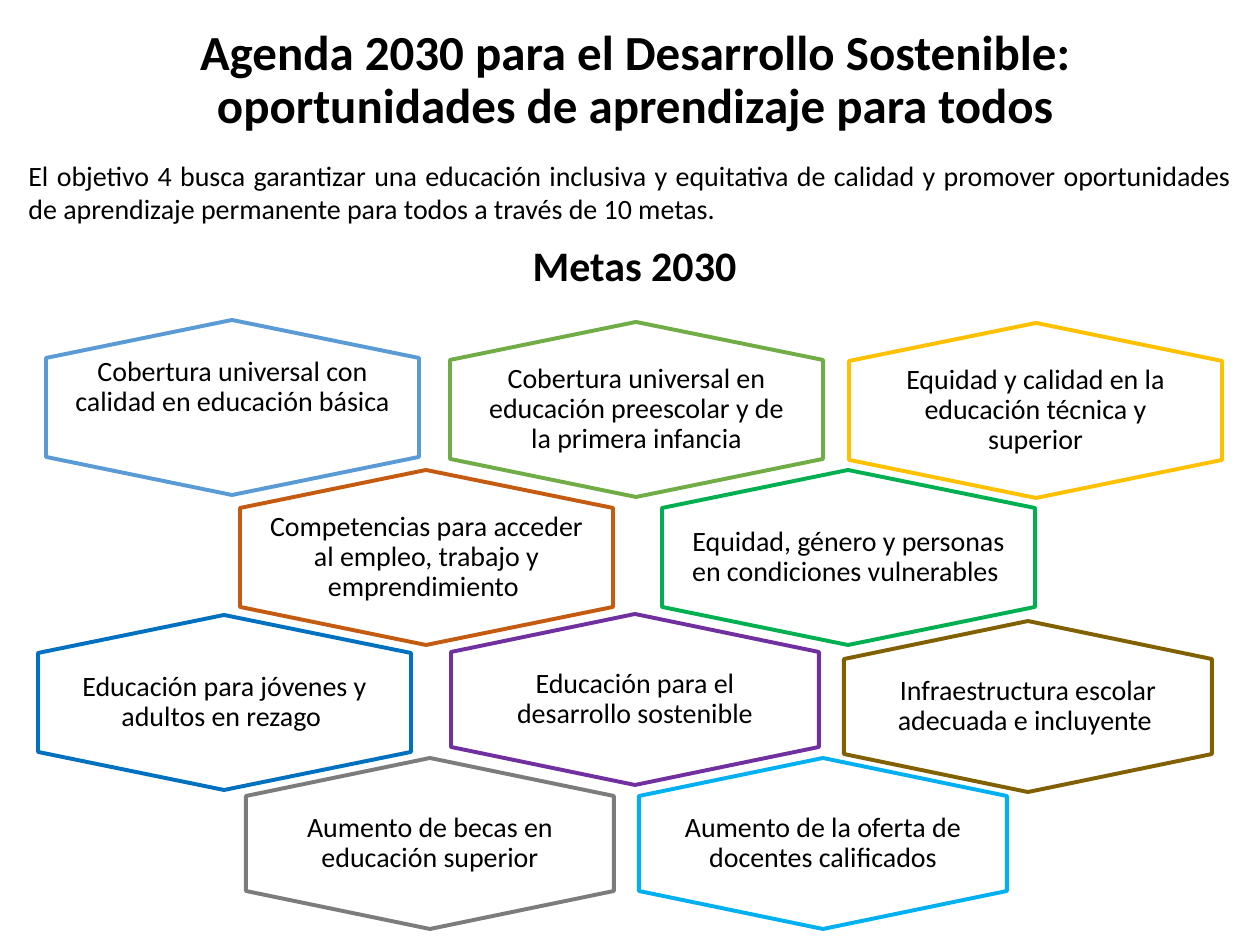
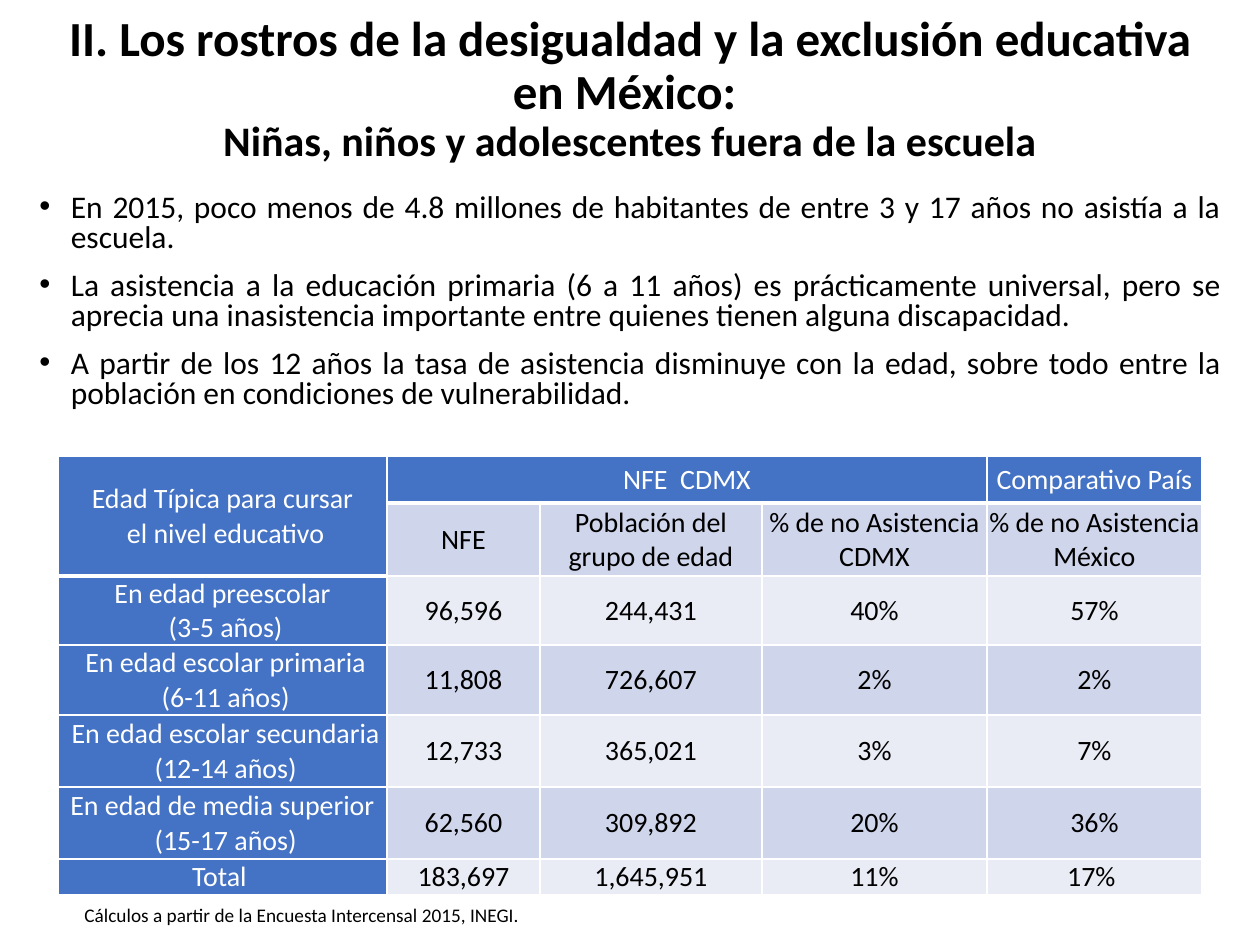
import pptx
import pptx.util
import pptx.dml.color
import pptx.enum.text
import pptx.oxml
import pptx.oxml.ns
import lxml.etree

SCALE = 914400 / 126
FONT = "Calibri"
COLOURS = {
    "text": "000000",
    "white": "FFFFFF",
    "header": "4472C4",
    "band": "CFD5EA",
    "light": "E9EBF5",
    "blue": "5B9BD5",
    "green": "70AD47",
    "gold": "FFC000",
    "rust": "C55A11",
    "emerald": "00B050",
    "navy": "0070C0",
    "purple": "7030A0",
    "brown": "806000",
    "grey": "7C7C7C",
    "sky": "00B0F0",
}
ALIGN = pptx.enum.text.PP_ALIGN
MIDDLE = pptx.enum.text.MSO_ANCHOR.MIDDLE
CENTRED = {"alignment": ALIGN.CENTER}
TIGHT = {"alignment": ALIGN.CENTER, "line_spacing": 0.9}
JUSTIFIED = {"alignment": ALIGN.JUSTIFY}
BULLETED = {
    "alignment": ALIGN.JUSTIFY,
    "line_spacing": 0.8,
    "space_before": pptx.util.Pt(10),
}

LARGE, SMALL = (373, 175), (368, 171)
NARROW_MARGINS, WIDE_MARGINS = (28, 33, 28, 33), (39, 43, 39, 43)
RAISED_MARGINS = (28, 33, 28, 73)
GOALS = [
    (46, 320, LARGE, "blue", RAISED_MARGINS, "Cobertura universal con calidad en educación básica"),
    (450, 322, LARGE, "green", WIDE_MARGINS,
     "Cobertura universal en educación preescolar y de la primera infancia"),
    (849, 323, LARGE, "gold", WIDE_MARGINS, "Equidad y calidad en la educación técnica y superior"),
    (240, 470, LARGE, "rust", NARROW_MARGINS,
     "Competencias para acceder al empleo, trabajo y emprendimiento "),
    (662, 470, LARGE, "emerald", NARROW_MARGINS,
     "Equidad, género y personas en condiciones vulnerables "),
    (38, 615, LARGE, "navy", WIDE_MARGINS, "Educación para jóvenes y adultos en rezago "),
    (451, 614, SMALL, "purple", WIDE_MARGINS, "Educación para el desarrollo sostenible"),
    (844, 621, SMALL, "brown", WIDE_MARGINS, "Infraestructura escolar adecuada e incluyente "),
    (246, 758, SMALL, "grey", WIDE_MARGINS, "Aumento de becas en educación superior"),
    (639, 758, SMALL, "sky", WIDE_MARGINS, "Aumento de la oferta de docentes calificados"),
]

FACTS = [
    "En 2015, poco menos de 4.8 millones de habitantes de entre 3 y 17 años no asistía a la escuela.",
    "La asistencia a la educación primaria (6 a 11 años) es prácticamente universal, pero se aprecia "
    "una inasistencia importante entre quienes tienen alguna discapacidad. ",
    "A partir de los 12 años la tasa de asistencia disminuye con la edad, sobre todo entre la "
    "población en condiciones de vulnerabilidad.",
]

COLUMN_WIDTHS = [329, 153, 222, 225, 215]
ROW_HEIGHTS = [47, 73, 69, 70, 72, 72, 36]
ATTENDANCE = [
    ["Edad Típica para cursar\n el nivel educativo", "NFE  CDMX", "", "", "Comparativo País"],
    ["", "NFE", "Población del grupo de edad", "% de no Asistencia CDMX", "% de no Asistencia México"],
    ["En edad preescolar\n (3-5 años)", "96,596", "244,431", "40%", "57%"],
    [" En edad escolar primaria\n (6-11 años)", "11,808", "726,607", "2%", "2%"],
    [" En edad escolar secundaria\n (12-14 años)", "12,733", "365,021", "3%", "7%"],
    ["En edad de media superior\n (15-17 años)", "62,560", "309,892", "20%", "36%"],
    ["Total ", "183,697", "1,645,951", "11%", "17%\u00a0".replace("\u00a0", " ")],
]


def px(length):
    return pptx.util.Emu(round(length * SCALE))


def colour(name):
    return pptx.dml.color.RGBColor.from_string(COLOURS[name])


def apply(target, values):
    for name, value in values.items():
        setattr(target, name, value)


def set_margins(target, margins):
    sides = ("margin_left", "margin_top", "margin_right", "margin_bottom")
    apply(target, dict(zip(sides, map(px, margins))))


def add_run(paragraph, text, size, bold=False, ink="text"):
    run = paragraph.add_run()
    run.text = text
    apply(run.font, {"name": FONT, "size": pptx.util.Pt(size), "bold": bold})
    run.font.color.rgb = colour(ink)


def write_paragraphs(frame, texts, size, layout, bold=False, ink="text"):
    for index, text in enumerate(texts):
        paragraph = frame.add_paragraph() if index else frame.paragraphs[0]
        apply(paragraph, layout)
        add_run(paragraph, text, size, bold, ink)


def add_text_frame(slide, box):
    frame = slide.shapes.add_textbox(*map(px, box)).text_frame
    frame.word_wrap = True
    return frame


def add_text(slide, box, texts, size, layout, bold=False):
    frame = add_text_frame(slide, box)
    write_paragraphs(frame, texts, size, layout, bold)
    return frame


def add_title(slide, box, lines):
    frame = add_text_frame(slide, box)
    frame.vertical_anchor = MIDDLE
    paragraph = frame.paragraphs[0]
    apply(paragraph, TIGHT)
    for index, (text, size) in enumerate(lines):
        if index:
            paragraph.add_line_break()
        add_run(paragraph, text, size, True)


def add_bullets(slide, box, texts):
    frame = add_text(slide, box, texts, 18, BULLETED)
    for paragraph in frame.paragraphs:
        properties = paragraph._p.get_or_add_pPr()
        properties.set("marL", str(pptx.util.Inches(0.25)))
        properties.set("indent", str(-pptx.util.Inches(0.25)))
        for tag, key, value in (("a:buFont", "typeface", "Arial"), ("a:buChar", "char", "•")):
            lxml.etree.SubElement(properties, pptx.oxml.ns.qn(tag)).set(key, value)


def add_goal(slide, left, top, size, outline, margins, text):
    width, height = size
    shoulder = round(height * 0.22)
    right, bottom, middle = left + width, top + height, left + width / 2
    builder = slide.shapes.build_freeform(middle, top, SCALE)
    builder.add_line_segments([
        (right, top + shoulder),
        (right, bottom - shoulder),
        (middle, bottom),
        (left, bottom - shoulder),
        (left, top + shoulder),
    ], close=True)
    hexagon = builder.convert_to_shape()
    hexagon.shadow.inherit = False
    hexagon.fill.solid()
    hexagon.fill.fore_color.rgb = colour("white")
    hexagon.line.color.rgb = colour(outline)
    hexagon.line.width = pptx.util.Pt(2.25)
    frame = hexagon.text_frame
    apply(frame, {"word_wrap": True, "vertical_anchor": MIDDLE})
    set_margins(frame, margins)
    write_paragraphs(frame, [text], 16, TIGHT)


def add_borders(cell, bottom_width):
    properties = cell._tc.get_or_add_tcPr()
    widths = {"lnL": 1, "lnR": 1, "lnT": 1, "lnB": bottom_width}
    for index, (side, width) in enumerate(widths.items()):
        border = pptx.oxml.parse_xml(
            f'<a:{side} {pptx.oxml.ns.nsdecls("a")} w="{pptx.util.Pt(width)}">'
            f'<a:solidFill><a:srgbClr val="{COLOURS["white"]}"/></a:solidFill></a:{side}>'
        )
        properties.insert(index, border)


def add_attendance_table(slide, left, top):
    table = slide.shapes.add_table(
        len(ROW_HEIGHTS), len(COLUMN_WIDTHS),
        px(left), px(top), px(sum(COLUMN_WIDTHS)), px(sum(ROW_HEIGHTS)),
    ).table
    apply(table, {"first_row": False, "horz_banding": False})
    for column, width in zip(table.columns, COLUMN_WIDTHS):
        column.width = px(width)
    for row, height in zip(table.rows, ROW_HEIGHTS):
        row.height = px(height)
    table.cell(0, 0).merge(table.cell(1, 0))
    table.cell(0, 1).merge(table.cell(0, 3))
    for row_index, values in enumerate(ATTENDANCE):
        for column_index, value in enumerate(values):
            cell = table.cell(row_index, column_index)
            is_header = row_index == 0 or column_index == 0
            band = "band" if row_index % 2 else "light"
            cell.fill.solid()
            cell.fill.fore_color.rgb = colour("header" if is_header else band)
            add_borders(cell, 3 if row_index == 0 else 1)
            cell.vertical_anchor = MIDDLE
            set_margins(cell, (1, 1, 1, 0))
            if value:
                ink = "white" if is_header else "text"
                write_paragraphs(cell.text_frame, value.split("\n"), 16, CENTRED, ink=ink)


def build_goals_slide(slide):
    add_title(slide, (92, 29, 1086, 105), [
        ("Agenda 2030 para el Desarrollo Sostenible:", 28),
        ("oportunidades de aprendizaje para todos", 28),
    ])
    add_text(slide, (484, 233, 301, 63), ["Metas 2030"], 24, CENTRED, True)
    for goal in GOALS:
        add_goal(slide, *goal)
    add_text(slide, (16, 152, 1228, 81), [
        "El objetivo 4 busca garantizar una educación inclusiva y equitativa de calidad y promover "
        "oportunidades de aprendizaje permanente para todos a través de 10 metas."
    ], 16, JUSTIFIED)


def build_attendance_slide(slide):
    add_title(slide, (39, 25, 1182, 129), [
        ("II. Los rostros de la desigualdad y la exclusión educativa en México: ", 28),
        ("Niñas, niños y adolescentes fuera de la escuela", 24),
    ])
    add_bullets(slide, (27, 188, 1207, 249), FACTS)
    add_attendance_table(slide, 58, 456)
    add_text(slide, (72, 897, 1116, 37),
             ["Cálculos a partir de la Encuesta Intercensal 2015, INEGI."], 11, {})


def main():
    presentation = pptx.Presentation()
    apply(presentation, {"slide_width": px(1260), "slide_height": px(945)})
    for build in (build_goals_slide, build_attendance_slide):
        build(presentation.slides.add_slide(presentation.slide_layouts[6]))
    presentation.save("out.pptx")


if __name__ == "__main__":
    main()
